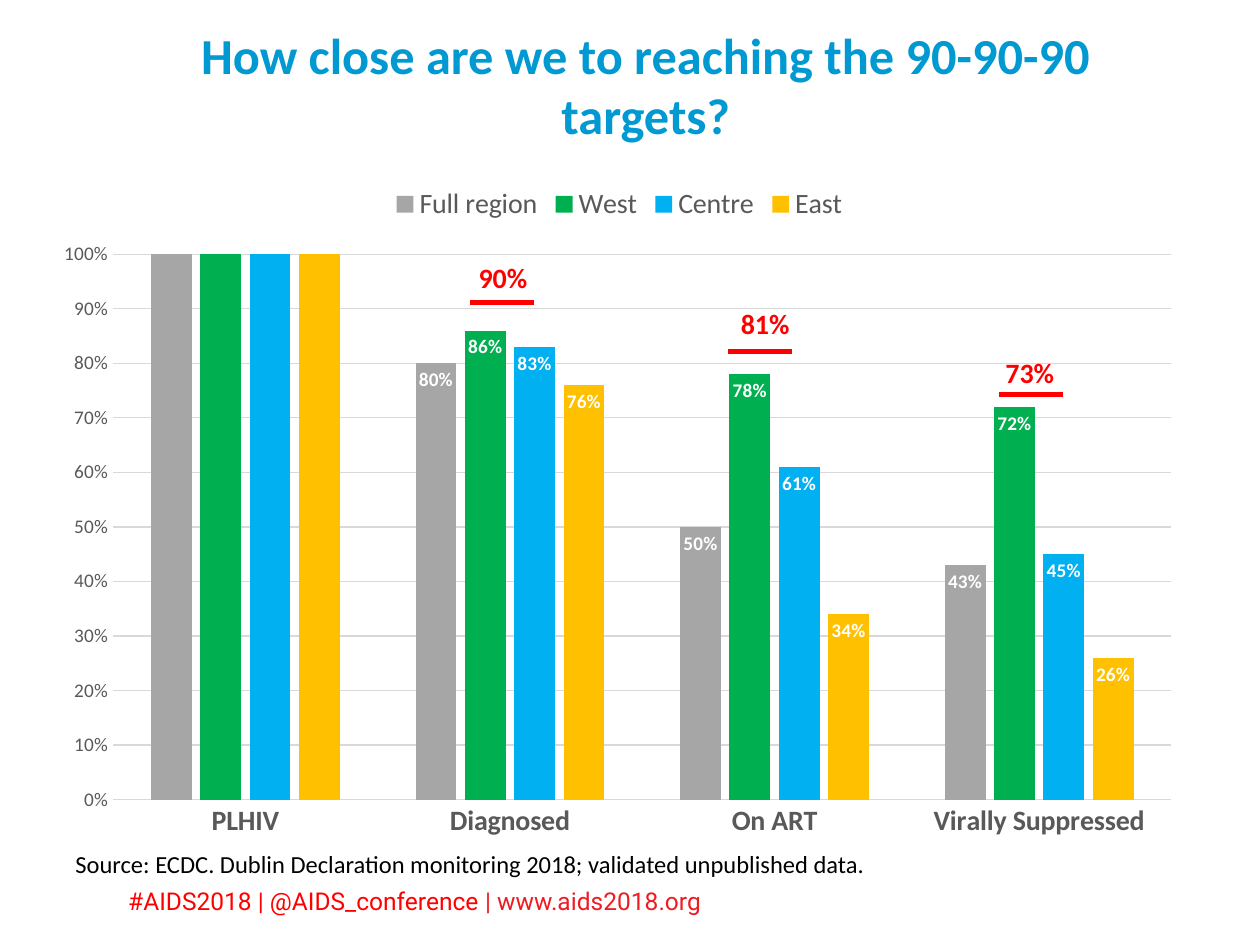
from lxml import etree
from pptx import Presentation
from pptx.chart.data import CategoryChartData
from pptx.dml.color import RGBColor
from pptx.enum import chart as ch, shapes, text
from pptx.oxml import parse_xml
from pptx.oxml.ns import qn
from pptx.util import Pt

NS = "http://schemas.openxmlformats.org/drawingml/2006/chart"
RED, GREY, RULE = "FF0000", "595959", "D9D9D9"
STAGES = ["PLHIV", "Diagnosed", "On ART", "Virally Suppressed"]
REGIONS = [
    ("Full region", "A6A6A6", [1, 0.8, 0.5, 0.43]),
    ("West", "00B050", [1, 0.86, 0.78, 0.72]),
    ("Centre", "00B0F0", [1, 0.83, 0.61, 0.45]),
    ("East", "FFC000", [1, 0.76, 0.34, 0.26]),
]
# label, label left and top, line left and top
GOALS = [
    ("90%", 266.4, 145.4, 268.6, 172.8),
    ("81%", 416.2, 171.4, 416.2, 200.9),
    ("73%", 567.4, 199.4, 571, 225.4),
]


def rgb(code):
    return RGBColor.from_string(code)


def style(font, size, color, bold=False, face="Calibri"):
    font.size, font.bold, font.name = Pt(size), bold, face
    font.color.rgb = rgb(color)


def place(shape, box):
    shape.left, shape.top, shape.width, shape.height = map(Pt, box)


def add_title(slide, box):
    title = slide.shapes.title
    place(title, box)
    frame = title.text_frame
    frame.word_wrap = True
    frame.auto_size = text.MSO_AUTO_SIZE.NONE
    frame.vertical_anchor = text.MSO_ANCHOR.MIDDLE
    para = frame.paragraphs[0]
    para.alignment = text.PP_ALIGN.CENTER
    run = para.add_run()
    run.text = "How close are we to reaching the 90-90-90 targets?"
    style(run.font, 28.8, "0099D2", True)


def add_text(slide, box, runs, size, bold=False, face="Calibri"):
    """Add one line of text; runs holds (words, colour) pairs."""
    frame = slide.shapes.add_textbox(*map(Pt, box)).text_frame
    frame.word_wrap = True
    para = frame.paragraphs[0]
    for words, color in runs:
        run = para.add_run()
        run.text = words
        style(run.font, size, color, bold, face)


def add_goal(slide, label, left, top, start, level):
    add_text(slide, (left, top, 44.3, 26.6), [(label, RED)], 16, True)
    line = slide.shapes.add_connector(
        shapes.MSO_CONNECTOR.STRAIGHT,
        Pt(start), Pt(level), Pt(start + 36.4), Pt(level))
    line.line.color.rgb = rgb(RED)
    line.line.width = Pt(3)
    etree.SubElement(line._element.spPr, qn("a:effectLst"))


def fix_plot(chart, x, y, w, h):
    """Set the inner plot area as shares of the chart box."""
    area = chart._chartSpace.chart.plotArea
    for old in area.findall(qn("c:layout")):
        area.remove(old)
    area.insert(0, parse_xml(
        f'<c:layout xmlns:c="{NS}"><c:manualLayout>'
        '<c:layoutTarget val="inner"/>'
        '<c:xMode val="edge"/><c:yMode val="edge"/>'
        f'<c:x val="{x}"/><c:y val="{y}"/><c:w val="{w}"/><c:h val="{h}"/>'
        '</c:manualLayout></c:layout>'))


def style_axes(chart):
    cat, val = chart.category_axis, chart.value_axis
    for axis in (cat, val):
        axis.major_tick_mark = axis.minor_tick_mark = ch.XL_TICK_MARK.NONE
    style(cat.tick_labels.font, 16, GREY, True)
    style(val.tick_labels.font, 11, GREY)
    val.minimum_scale, val.maximum_scale, val.major_unit = 0, 1, 0.1
    val.tick_labels.number_format = "0%"
    val.tick_labels.number_format_is_linked = False
    val.format.line.fill.background()
    val.has_major_gridlines = True
    for line in (cat.format.line, val.major_gridlines.format.line):
        line.color.rgb = rgb(RULE)
        line.width = Pt(0.75)


def style_bars(bars, color):
    bars.format.fill.solid()
    bars.format.fill.fore_color.rgb = rgb(color)
    labels = bars.data_labels
    style(labels.font, 11, "FFFFFF", True)
    labels.number_format = "0%"
    labels.number_format_is_linked = False
    labels.position = ch.XL_LABEL_POSITION.INSIDE_END
    labels.show_value = True
    # The first stage is always 100% and carries no label
    labels._element.insert(0, parse_xml(
        f'<c:dLbl xmlns:c="{NS}"><c:idx val="0"/><c:delete val="1"/></c:dLbl>'))


def add_bars(slide, box):
    data = CategoryChartData(number_format="0%")
    data.categories = STAGES
    for name, _, vals in REGIONS:
        data.add_series(name, vals)
    chart = slide.shapes.add_chart(
        ch.XL_CHART_TYPE.COLUMN_CLUSTERED, *map(Pt, box), data).chart
    style(chart.font, 10, "000000")
    chart.has_title = False
    chart.has_legend = True
    chart.legend.position = ch.XL_LEGEND_POSITION.TOP
    chart.legend.include_in_layout = False
    style(chart.legend.font, 16, GREY)
    plot = chart.plots[0]
    plot.gap_width, plot.overlap, plot.vary_by_categories = 186, -21, False
    style_axes(chart)
    for bars, (_, color, _) in zip(plot.series, REGIONS):
        style_bars(bars, color)
    fix_plot(chart, 0.06, 0.12, 0.92, 0.8)


def main():
    deck = Presentation()
    deck.slide_width, deck.slide_height = Pt(720), Pt(540)
    slide = deck.slides.add_slide(deck.slide_layouts[5])
    add_text(slide, (66.2, 502.6, 595.4, 24.5),
             [("#AIDS2018 | @AIDS_conference ", RED),
              ("|\u00a0www.aids2018.org".replace("\u00a0", " "), "ED1C24")],
             14, face="Roboto")
    add_bars(slide, (25.2, 98.6, 657.4, 389.5))
    add_title(slide, (83.5, 15.8, 571, 64.8))
    for goal in GOALS:
        add_goal(slide, *goal)
    add_text(slide, (36, 481.7, 592.6, 24.5),
             [("Source: ECDC. Dublin Declaration monitoring 2018; "
               "validated unpublished data.", "000000")], 14)
    deck.save("out.pptx")


if __name__ == "__main__":
    main()
